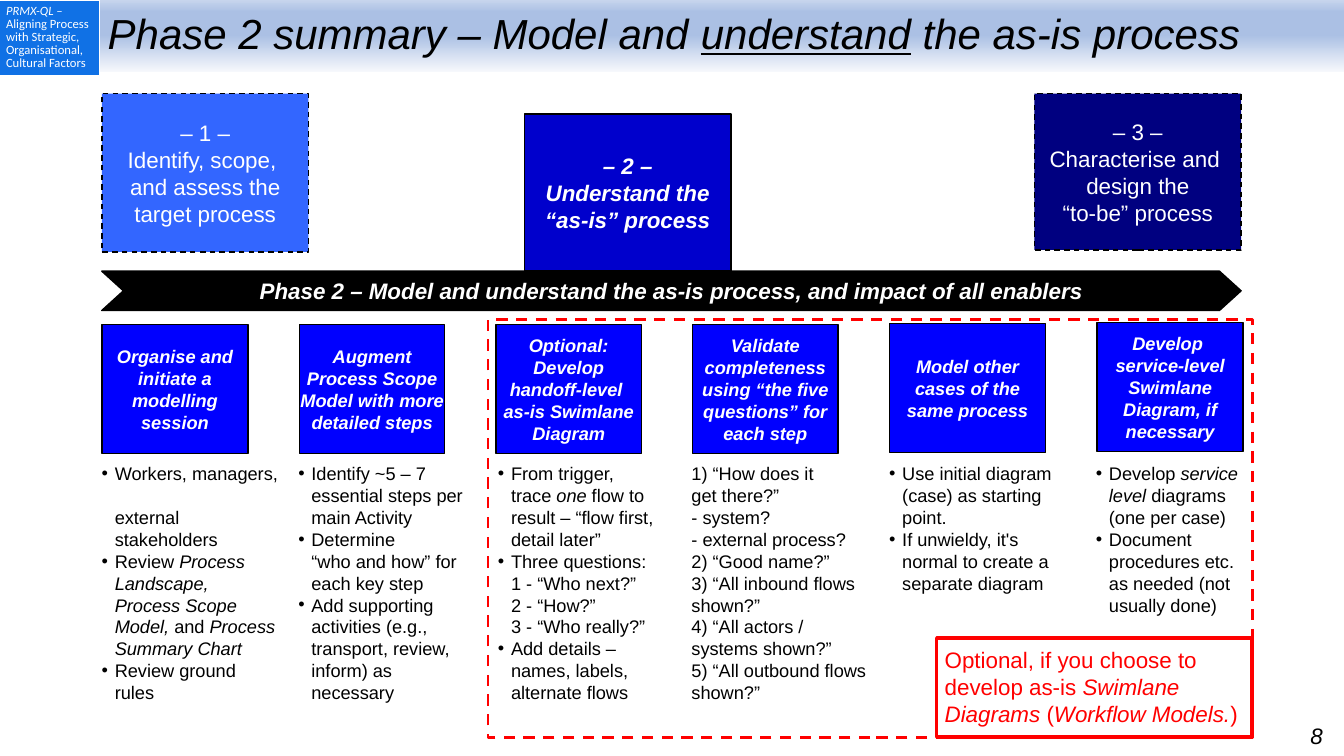
from lxml import etree
from pptx import Presentation
from pptx import util as u
from pptx.dml.color import RGBColor
from pptx.enum import dml, shapes, text
from pptx.oxml import ns

PX = 9144  # one px is 1/100 inch
MID = text.MSO_ANCHOR.MIDDLE
TOP = text.MSO_ANCHOR.TOP
LEFT, CENTER, RIGHT = text.PP_ALIGN.LEFT, text.PP_ALIGN.CENTER, text.PP_ALIGN.RIGHT
RECT = shapes.MSO_SHAPE.RECTANGLE


def px(*nums):
    return [u.Emu(n * PX) for n in nums]


def color(fmt, code):
    fmt.rgb = RGBColor.from_string(code)


def paint(fill, code):
    if code:
        fill.solid()
        color(fill.fore_color, code)
    else:
        fill.background()


def node(owner, tag, **attrs):
    return etree.SubElement(owner, ns.qn(tag), attrs)


def write(frame, paras, size=13, ink="FFFFFF", bold=False, italic=False, align=LEFT,
          anchor=TOP, pad=(10, 5), bullet=False, space=None, font="Arial"):
    """Fill a frame; *stars* flip italics, _bars_ underline and \\n breaks a line."""
    frame.word_wrap = True
    frame.vertical_anchor = anchor
    frame.margin_left, frame.margin_top = frame.margin_right, frame.margin_bottom = px(*pad)
    for i, para in enumerate(paras):
        p = frame.paragraphs[0] if i == 0 else frame.add_paragraph()
        p.alignment = align
        if space:
            p.line_spacing = space
        if bullet:
            props = p._p.get_or_add_pPr()
            props.set("marL", str(13 * PX))
            props.set("indent", str(-13 * PX))
            node(node(props, "a:buClr"), "a:srgbClr", val=ink)
            node(props, "a:buFont", typeface="Arial")
            node(props, "a:buChar", char="•")
        for j, part in enumerate(para.split("*")):
            for k, piece in enumerate(part.split("_")):
                for n, line in enumerate(piece.split("\n")):
                    if n:
                        p.add_line_break()
                        node(p._p[-1], "a:rPr", sz=str(size * 100))
                    if not line:
                        continue
                    run = p.add_run()
                    run.text = line
                    face = run.font
                    face.name, face.size, face.bold = font, u.Pt(size), bold
                    face.italic = italic != (j % 2 == 1)
                    face.underline = k % 2 == 1
                    color(face.color, ink)


class Deck:
    def __init__(self):
        self.show = Presentation()
        self.show.slide_width, self.show.slide_height = px(1333, 750)
        self.slide = self.show.slides.add_slide(self.show.slide_layouts[6])

    def shape(self, area, fill=None, line=None, width=1, dash=False, kind=RECT):
        item = self.slide.shapes.add_shape(kind, *px(*area))
        item.shadow.inherit = False
        paint(item.fill, fill)
        paint(item.line.fill, line)
        if line:
            item.line.width = u.Pt(width)
        if dash:
            item.line.dash_style = dml.MSO_LINE.DASH
        return item

    def box(self, area, paras, fill, dash=False, kind=RECT, pad=(0, 5), **style):
        item = self.shape(area, fill, "000000", dash=dash, kind=kind)
        write(item.text_frame, paras, align=CENTER, anchor=MID, pad=pad, **style)
        return item

    def label(self, area, paras, **style):
        item = self.slide.shapes.add_textbox(*px(*area))
        write(item.text_frame, paras, **style)

    def fade(self, area, stops):
        """Draw a band whose colours run from bottom to top."""
        item = self.shape(area)
        item.fill.gradient()
        grad = item.fill._xPr.find(ns.qn("a:gradFill"))
        marks = grad.find(ns.qn("a:gsLst"))
        for old in list(marks):
            marks.remove(old)
        for pos, code in stops:
            node(node(marks, "a:gs", pos=str(pos * 1000)), "a:srgbClr", val=code)
        grad.find(ns.qn("a:lin")).set("ang", str(270 * 60000))

    def table(self, area, paras, fill, **style):
        grid = self.slide.shapes.add_table(1, 1, *px(*area)).table
        cell = grid.cell(0, 0)
        paint(cell.fill, fill)
        write(cell.text_frame, paras, pad=(8, 5), **style)
        cell.margin_left = cell.margin_right = px(8)[0]
        cell.margin_top = cell.margin_bottom = px(5)[0]


# phase: area, paragraphs, fill, dashed, strong
PHASES = [
    ((101, 93, 205, 157), ["– 1 –", "Identify, scope, \nand assess the target process"],
     "3366FF", True, False),
    ((520, 113, 205, 156), ["– 2 –", "Understand the", "“as-is” process"],
     "0000CC", False, True),
    ((1026, 93, 205, 155), ["– 3 –", "Characterise and ", "design the\n“to-be” process"],
     "000080", True, False),
]

# step: box left, top, width; heading; notes left, width; bulleted; notes
STEPS = [
    (101, 322, 145, ["Organise and initiate a modelling session"], 91, 195, True,
     ["Workers, managers, \nexternal stakeholders",
      "Review *Process Landscape, Process Scope Model, *and* Process Summary Chart*",
      "Review ground rules"]),
    (297, 322, 144, ["Augment Process Scope Model with more detailed steps"], 286, 199, True,
     ["Identify ~5 – 7 essential steps per main Activity",
      "Determine \n“who and how” for each key step",
      "Add supporting activities (e.g., transport, review, inform) as necessary"]),
    (492, 322, 144, ["Optional:", "Develop handoff-level \nas-is Swimlane Diagram"],
     484, 191, True,
     ["From trigger, \ntrace *one* flow to result – “flow first, detail later”",
      "Three questions:\n1 - “Who next?”\n2 - “How?”\n3 - “Who really?”",
      "Add details – \nnames, labels, alternate flows"]),
    (687, 322, 144, ["Validate completeness using “the five questions” for each step"],
     676, 196, False,
     ["1) “How does it \nget there?”\n- system? \n- external process?",
      "2) “Good name?”", "3) “All inbound flows shown?”",
      "4) “All actors / systems shown?”", "5) “All outbound flows shown?”"]),
    (882, 321, 155, ["Model other cases of the same process"], 872, 205, True,
     ["Use initial diagram (case) as starting point.",
      "If unwieldy, it's normal to create a separate diagram"]),
    (1088, 320, 145, ["Develop \nservice-level Swimlane Diagram, if necessary"],
     1077, 165, True,
     ["Develop *service level* diagrams (one per case)",
      "Document procedures etc. as needed (not usually done)"]),
]


def main():
    deck = Deck()
    deck.table((-2, 0, 101, 72),
               ["*PRMX-QL –  \n*Aligning Process with Strategic, Organisational, Cultural Factors"],
               "1071E5", size=9, font="Calibri", space=0.85)
    deck.fade((99, 0, 1234, 71),
              [(0, "F6F8FC"), (51, "ABC0E4"), (83, "ABC0E4"), (100, "C7D5ED")])
    page = deck.shape((1217, 716, 95, 27), "FFFFFF")
    write(page.text_frame, ["8"], size=16, ink="000000", italic=True, align=RIGHT, pad=(0, 0))
    deck.label((97, 0, 1220, 71), ["Phase 2 summary – Model and _understand_ the as-is process"],
               size=30, ink="000000", italic=True, anchor=MID, space=0.9)

    arrow = deck.box((101, 269, 1130, 39),
                     ["Phase 2 – Model and understand the as-is process, and impact of all enablers"],
                     "000000", kind=shapes.MSO_SHAPE.CHEVRON, size=16, bold=True, italic=True)
    arrow.adjustments[0] = 0.55

    for left, top, width, head, edge, span, bullet, notes in STEPS:
        deck.box((left, top, width, 128), head, "0000FF", bold=True, italic=True)
        deck.label((edge, 454, span, 251), notes, ink="000000", bullet=bullet)
    for area, paras, fill, dash, strong in PHASES:
        deck.box(area, paras, fill, dash, pad=(0, 10), size=16, bold=strong, italic=strong)

    deck.shape((484, 317, 758, 415), line="FF0000", width=2, dash=True)
    option = deck.shape((929, 633, 313, 98), line="FF0000", width=2.5)
    write(option.text_frame,
          ["Optional, if you choose to develop as-is *Swimlane Diagrams* (*Workflow Models.*)"],
          size=16, ink="FF0000", pad=(8, 8))
    deck.show.save("out.pptx")


if __name__ == "__main__":
    main()
